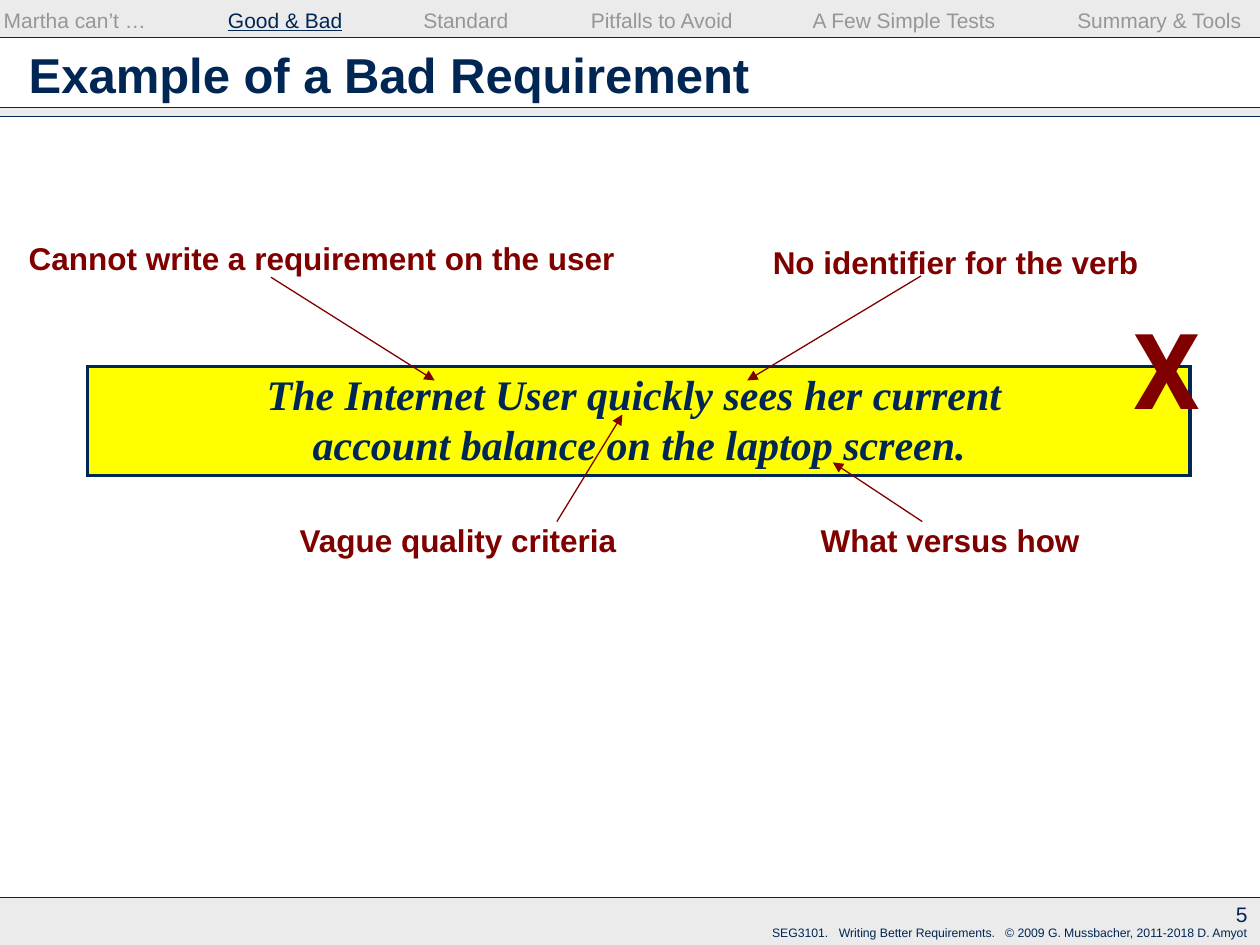
import lxml.etree
import pptx
import pptx.dml.color
import pptx.enum.shapes
import pptx.enum.text
import pptx.oxml.ns
import pptx.util

COLUMNS, ROWS = 100, 75
NAVY, MAROON, GREY, YELLOW, BAND = "002654", "800000", "969696", "FFFF00", "CDCDCD"
ALIGN = pptx.enum.text.PP_ALIGN
ANCHOR = pptx.enum.text.MSO_ANCHOR

deck = pptx.Presentation()
deck.slide_width = pptx.util.Inches(10)
deck.slide_height = pptx.util.Inches(7.5)
page = deck.slides.add_slide(deck.slide_layouts[6])


def across(columns):
    return round(deck.slide_width * columns / COLUMNS)


def down(rows):
    return round(deck.slide_height * rows / ROWS)


def place(box):
    left, top, width, height = box
    return across(left), down(top), across(width), down(height)


def colour(value):
    return pptx.dml.color.RGBColor.from_string(value)


def add_xml(parent, tag, **attributes):
    return lxml.etree.SubElement(parent, pptx.oxml.ns.qn(tag), **attributes)


def add_text(box, text, *, size, color=NAVY, font="Arial", bold=False, italic=False,
             align=ALIGN.LEFT, anchor=ANCHOR.TOP, insets=(1, 0.5, 1, 0.5), tabs=(),
             underlined=None):
    """Write text in a box; a list becomes tabbed spans, one of which may be underlined."""
    frame = page.shapes.add_textbox(*place(box)).text_frame
    frame.word_wrap = True
    frame.vertical_anchor = anchor
    frame.margin_left, frame.margin_right = across(insets[0]), across(insets[2])
    frame.margin_top, frame.margin_bottom = down(insets[1]), down(insets[3])
    para = frame.paragraphs[0]
    para.alignment = align
    if tabs:
        stops = add_xml(para._p.get_or_add_pPr(), "a:tabLst")
        for stop in tabs:
            add_xml(stops, "a:tab", pos=str(across(stop)), algn="l")

    def add_span(words):
        span = para.add_run()
        span.text = words
        span.font.size = pptx.util.Pt(size)
        span.font.name = font
        span.font.bold, span.font.italic = bold, italic
        span.font.underline = words == underlined
        span.font.color.rgb = colour(NAVY if words == underlined else color)

    for index, piece in enumerate([text] if isinstance(text, str) else text):
        if index:
            add_span("\t")
        for line_number, line in enumerate(piece.split("\n")):
            if line_number:
                para.add_line_break()
            add_span(line)


def add_panel(box, fill, opacity=100, border=None):
    panel = page.shapes.add_shape(pptx.enum.shapes.MSO_SHAPE.RECTANGLE, *place(box))
    panel.shadow.inherit = False
    panel.fill.solid()
    panel.fill.fore_color.rgb = colour(fill)
    if opacity < 100:
        shade = panel._element.spPr.find(".//" + pptx.oxml.ns.qn("a:srgbClr"))
        add_xml(shade, "a:alpha", val=str(opacity * 1000))
    if border:
        panel.line.color.rgb = colour(border)
        panel.line.width = pptx.util.Pt(2)
        add_xml(panel.line._get_or_add_ln(), "a:miter", lim="800000")
    else:
        panel.line.fill.background()


def add_line(start, end, color=NAVY, arrow=False):
    line = page.shapes.add_connector(
        pptx.enum.shapes.MSO_CONNECTOR.STRAIGHT,
        across(start[0]), down(start[1]), across(end[0]), down(end[1]))
    line.line.color.rgb = colour(color)
    line.line.width = pptx.util.Pt(0.75)
    if arrow:
        add_xml(line.line._get_or_add_ln(), "a:tailEnd", type="triangle")
    add_xml(line._element.spPr, "a:effectLst")


def add_band(box, rules):
    """Pale strip, with a line across the page at each of the given rows."""
    left, _, width, _ = box
    add_panel(box, BAND, opacity=40)
    for row in rules:
        add_line((left, row), (left + width, row))


def add_navigation(box):
    left, top, width, height = box
    add_band(box, [top + height])
    add_text((left, top + 0.6, width, height - 0.6),
             ["Martha can’t …", "Good & Bad", "Standard", "Pitfalls to Avoid",
              "A Few Simple Tests", "Summary & Tools"],
             size=12, color=GREY, underlined="Good & Bad",
             tabs=(17.8, 33.3, 46.6, 64.2, 85.2), insets=(0.3, 0, 0, 0))


def add_heading(box, text):
    left, top, width, height = box
    bottom = top + height
    add_band((left, bottom - 0.74, width, 0.7), [bottom - 0.74, bottom])
    add_text((left + 1.3, top - 0.4, width - 2.6, height + 0.3), text,
             size=28, bold=True, anchor=ANCHOR.MIDDLE)


def add_footer(box, number):
    left, top, width, height = box
    right = left + width
    add_band(box, [top])
    add_text((right - 7, top - 0.4, 7, 3.4), number, size=12,
             align=ALIGN.RIGHT, anchor=ANCHOR.MIDDLE)
    add_text((right - 39.7, top + 1.67, 39.7, 2.1),
             ["SEG3101.", "Writing Better Requirements.",
              "© 2009 G. Mussbacher, 2011-2018 D. Amyot"],
             size=7, tabs=(5.3, 18.5), insets=(1, 0.5, 0, 0))


def add_statement(box, text):
    left, top, width, height = box
    add_panel(box, YELLOW, border=NAVY)
    add_text((left, top + 0.13, width + 0.1, height - 0.7), text, size=24,
             font="Times New Roman", bold=True, italic=True, align=ALIGN.CENTER,
             insets=(0, 0, 0, 0))
    add_text((left + width - 5.45, top - 5.4, 8, 11), "X", size=60,
             color=MAROON, font="Roboto", bold=True)


def add_remark(box, text, start, end):
    add_text(box, text, size=18, color=MAROON, bold=True)
    add_line(start, end, MAROON, arrow=True)


def main():
    add_navigation((0, 0, COLUMNS, 2.98))
    add_heading((0, 3, COLUMNS, 6.27), "Example of a Bad Requirement")
    add_footer((0, 71.23, COLUMNS, 3.77), "5")
    add_statement((6.95, 29.1, 87.5, 8.65),
                  "The Internet User quickly sees her current \n"
                  "account balance on the laptop screen.")
    remarks = [
        ((1.3, 18.45, 50, 4), "Cannot write a requirement on the user", (21.5, 22), (34.5, 30.2)),
        ((60.35, 18.8, 33, 4), "No identifier for the verb", (73.1, 21.9), (59.3, 30.2)),
        ((22.8, 40.85, 30, 4), "Vague quality criteria", (44.2, 41.4), (49.4, 32.9)),
        ((64.15, 40.85, 25, 4), "What versus how", (73.2, 41.4), (66.1, 36.7)),
    ]
    for remark in remarks:
        add_remark(*remark)
    deck.save("out.pptx")


if __name__ == "__main__":
    main()
